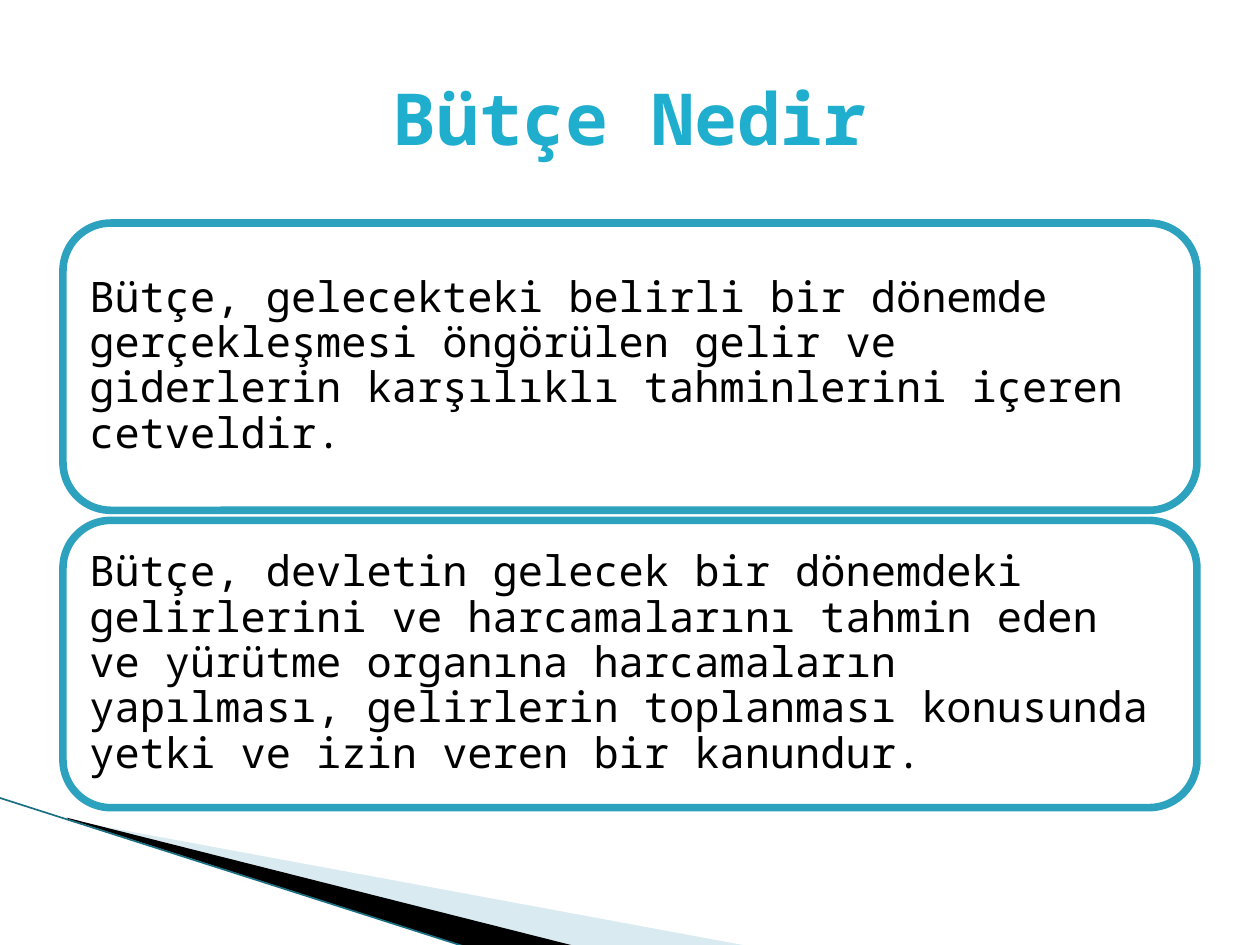
from lxml import etree
from pptx import Presentation
from pptx.dml.color import RGBColor
from pptx.enum.shapes import MSO_CONNECTOR, MSO_SHAPE
from pptx.enum.text import MSO_ANCHOR, PP_ALIGN
from pptx.oxml.ns import qn
from pptx.util import Inches, Pt

STRAIGHT = MSO_CONNECTOR.STRAIGHT
ROUNDED = MSO_SHAPE.ROUNDED_RECTANGLE
MIDDLE = MSO_ANCHOR.MIDDLE
LEFT, CENTER = PP_ALIGN.LEFT, PP_ALIGN.CENTER

WHITE = RGBColor(0xFF, 0xFF, 0xFF)
BLACK = RGBColor(0x00, 0x00, 0x00)
TITLE_BLUE = RGBColor(0x1F, 0xAE, 0xCD)
BORDER_BLUE = RGBColor(0x2D, 0xA2, 0xBF)
PALE_BLUE = RGBColor(0xA0, 0xCB, 0xDC)
DARK_TEAL = RGBColor(0x1B, 0x6F, 0x82)

FONT = "Noto Sans Mono"
TITLE_FORMAT = {"name": FONT, "size": Pt(41), "bold": True}
BODY_FORMAT = {"name": FONT, "size": Pt(24), "bold": False}

# Content column: equal cards stacked at a fixed pitch
MARGIN, WIDTH = 0.5, 9
CARD_TOP, CARD_HEIGHT, CARD_GAP = 1.77, 2.28, 0.08

DEFINITIONS = [
    "Bütçe, gelecekteki belirli bir dönemde gerçekleşmesi öngörülen gelir ve "
    "giderlerin karşılıklı tahminlerini içeren cetveldir.",
    "Bütçe, devletin gelecek bir dönemdeki gelirlerini ve harcamalarını tahmin "
    "eden ve yürütme organına harcamaların yapılması, gelirlerin toplanması "
    "konusunda yetki ve izin veren bir kanundur.",
]


def write_text(frame, text, font_format, color, align):
    frame.text = text
    frame.word_wrap = True
    frame.vertical_anchor = MIDDLE
    paragraph = frame.paragraphs[0]
    paragraph.alignment = align
    font = paragraph.runs[0].font
    for attribute, value in font_format.items():
        setattr(font, attribute, value)
    font.color.rgb = color
    return paragraph


def add_wedge(slide, points, color, opacity=None):
    corners = [(Inches(x), Inches(y)) for x, y in points]
    builder = slide.shapes.build_freeform(*corners[0])
    builder.add_line_segments(corners[1:], close=True)
    wedge = builder.convert_to_shape()
    wedge.shadow.inherit = False
    wedge.fill.solid()
    wedge.fill.fore_color.rgb = color
    wedge.line.fill.background()
    if opacity is not None:
        fill_color = wedge.fill._xPr.find(qn("a:solidFill"))[0]
        etree.SubElement(fill_color, qn("a:alpha"), val=str(opacity * 1000))


def add_edge_line(slide, start, end):
    edge = slide.shapes.add_connector(
        STRAIGHT, *(Inches(value) for value in start + end))
    edge.line.color.rgb = DARK_TEAL
    edge.line.width = Pt(0.95)
    etree.SubElement(edge._element.spPr, qn("a:effectLst"))


def add_card(slide, row, text):
    top = CARD_TOP + row * (CARD_HEIGHT + CARD_GAP)
    card = slide.shapes.add_shape(
        ROUNDED, Inches(MARGIN), Inches(top), Inches(WIDTH), Inches(CARD_HEIGHT))
    card.shadow.inherit = False
    card.fill.solid()
    card.fill.fore_color.rgb = WHITE
    card.line.color.rgb = BORDER_BLUE
    card.line.width = Pt(4.33)
    for side in ("left", "top", "right", "bottom"):
        setattr(card.text_frame, f"margin_{side}", Inches(0.1))
    paragraph = write_text(card.text_frame, text, BODY_FORMAT, BLACK, LEFT)
    paragraph.line_spacing = 0.9


def add_title(slide, text):
    title = slide.shapes.title
    title.left, title.top = Inches(MARGIN), Inches(0.3)
    title.width, title.height = Inches(WIDTH), Inches(1.25)
    write_text(title.text_frame, text, TITLE_FORMAT, TITLE_BLUE, CENTER)


def main():
    deck = Presentation()
    deck.slide_width, deck.slide_height = Inches(10), Inches(7.5)
    slide = deck.slides.add_slide(deck.slide_layouts[5])

    # Corner decoration
    add_wedge(slide, [(0.55, 6.51), (5.95, 7.51), (4.56, 7.51), (0.55, 6.5)],
              PALE_BLUE, opacity=40)
    add_wedge(slide, [(0.53, 6.49), (4.57, 7.51), (3.72, 7.52), (0.54, 6.5)],
              BLACK)
    add_edge_line(slide, (-0.01, 6.33), (3.71, 7.52))

    # Title and definitions
    add_title(slide, "Bütçe Nedir")
    for row, definition in enumerate(DEFINITIONS):
        add_card(slide, row, definition)

    deck.save("out.pptx")


if __name__ == "__main__":
    main()
